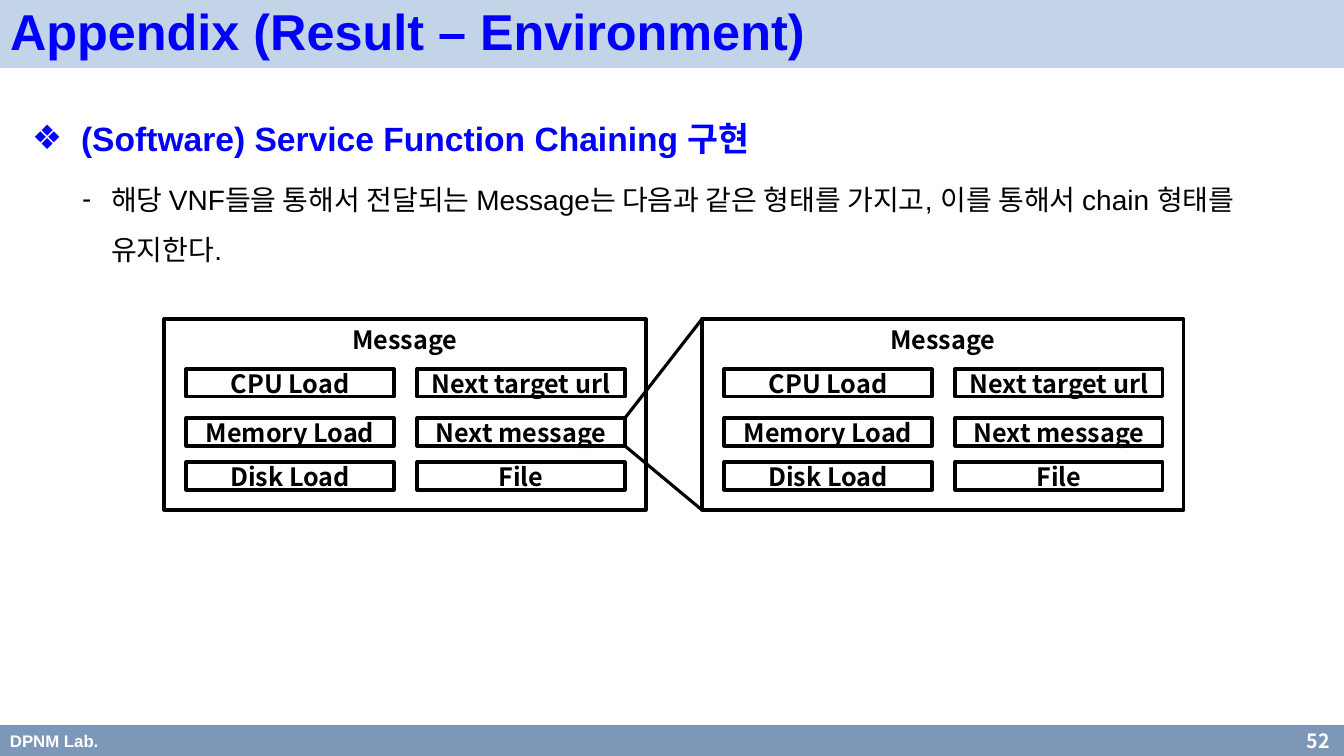
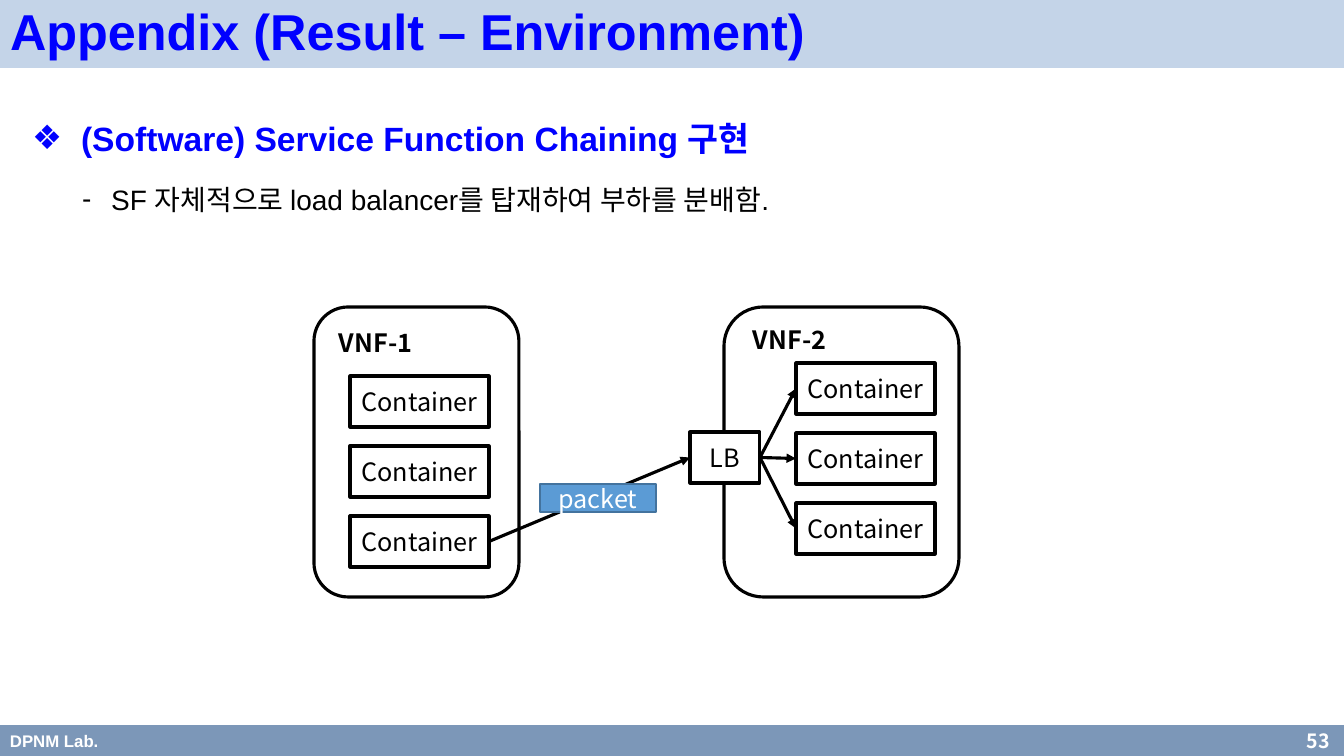
from lxml import etree
from pptx import Presentation
from pptx.dml.color import RGBColor
from pptx.enum.shapes import MSO_CONNECTOR, MSO_SHAPE
from pptx.enum.text import MSO_ANCHOR, MSO_AUTO_SIZE, PP_ALIGN
from pptx.oxml.ns import qn
from pptx.util import Emu, Pt

RECT, ROUNDED = MSO_SHAPE.RECTANGLE, MSO_SHAPE.ROUNDED_RECTANGLE
STRAIGHT = MSO_CONNECTOR.STRAIGHT
LEFT, CENTER, RIGHT = PP_ALIGN.LEFT, PP_ALIGN.CENTER, PP_ALIGN.RIGHT
TOP, MIDDLE = MSO_ANCHOR.TOP, MSO_ANCHOR.MIDDLE
NO_AUTOFIT = MSO_AUTO_SIZE.NONE

EMU_PER_PX = 914400 / 100.8
SLIDE_W, SLIDE_H = 1344, 756
TITLE_H, FOOTER_Y, FOOTER_H = 68, 725, 31

LATIN, KOREAN = "Arial", "Noto Sans CJK KR"
BLACK, WHITE, BLUE = "000000", "FFFFFF", "0000FF"
TITLE_BAND, FOOTER_BAND = "95B3D7", "376092"
PACKET_FILL, PACKET_LINE = "5B9BD5", "43739E"

TITLE = "Appendix (Result – Environment)"
HEADING = "(Software) Service Function Chaining 구현"


def px(length):
    return Emu(round(length * EMU_PER_PX))


def rgb(value):
    return RGBColor.from_string(value)


def place(shape, x, y, w, h):
    shape.left, shape.top, shape.width, shape.height = map(px, (x, y, w, h))


def fill_translucent(shape, color, percent):
    shape.fill.solid()
    shape.fill.fore_color.rgb = rgb(color)
    srgb = shape.element.spPr.find(qn("a:solidFill")).find(qn("a:srgbClr"))
    etree.SubElement(srgb, qn("a:alpha"), val=str(percent * 1000))


def write(paragraph, text, size, color=BLACK, font=KOREAN, bold=False, align=LEFT):
    paragraph.text = text
    paragraph.alignment = align
    paragraph.font.name = font
    paragraph.font.size = Pt(size)
    paragraph.font.bold = bold
    paragraph.font.color.rgb = rgb(color)


# Basic elements
def add_box(slide, x, y, w, h, text="", fill=None, line=BLACK, weight=2.25,
            color=BLACK, bold=False, anchor=MIDDLE, kind=RECT):
    box = slide.shapes.add_shape(kind, *map(px, (x, y, w, h)))
    box.shadow.inherit = False
    if fill:
        box.fill.solid()
        box.fill.fore_color.rgb = rgb(fill)
    else:
        box.fill.background()
    box.line.color.rgb = rgb(line)
    box.line.width = Pt(weight)
    if text:
        box.text_frame.word_wrap = True
        box.text_frame.vertical_anchor = anchor
        write(box.text_frame.paragraphs[0], text, 18, color, bold=bold, align=CENTER)
    return box


def add_label(slide, x, y, w, h, text, size, anchor=TOP, **style):
    label = slide.shapes.add_textbox(*map(px, (x, y, w, h)))
    label.text_frame.word_wrap = False
    label.text_frame.vertical_anchor = anchor
    write(label.text_frame.paragraphs[0], text, size, bold=True, **style)


def add_line(slide, start=(0, 0), end=(0, 0)):
    line = slide.shapes.add_connector(STRAIGHT, *map(px, (*start, *end)))
    line.line.color.rgb = rgb(BLACK)
    line.line.width = Pt(2.25)
    etree.SubElement(line.element.spPr, qn("a:effectLst"))
    return line


def add_arrow(slide, source, target):
    """Arrow from the right side of source to the left side of target."""
    arrow = add_line(slide)
    arrow.begin_connect(source, 3)
    arrow.end_connect(target, 1)
    outline = arrow.element.spPr.find(qn("a:ln"))
    etree.SubElement(outline, qn("a:tailEnd"), type="triangle")


# Shared bands, kept on the layout
def add_band(layout, slide, y, h, color, percent, text=""):
    band = slide.shapes.add_shape(RECT, *map(px, (0, y, SLIDE_W, h)))
    band.shadow.inherit = False
    band.line.fill.background()
    fill_translucent(band, color, percent)
    if text:
        band.text_frame.vertical_anchor = MIDDLE
        write(band.text_frame.paragraphs[0], text, 12, WHITE, LATIN, True)
    layout.shapes.element.insert(2, band.element)


def clear_layout_footers(layout):
    for placeholder in list(layout.placeholders):
        if placeholder.placeholder_format.idx >= 10:
            layout.shapes.element.remove(placeholder.element)


# Title, list and page number
def add_bullet(paragraph, char, margin, hanging):
    properties = paragraph._p.get_or_add_pPr()
    properties.set("marL", str(px(margin)))
    properties.set("indent", str(px(-hanging)))
    etree.SubElement(properties, qn("a:buFont"), typeface=LATIN)
    etree.SubElement(properties, qn("a:buChar"), char=char)


def fill_page(slide, detail, number):
    title = slide.shapes.title
    place(title, 0, 0, SLIDE_W, TITLE_H)
    fill_translucent(title, TITLE_BAND, 33)
    title.text_frame.auto_size = NO_AUTOFIT
    title.text_frame.vertical_anchor = MIDDLE
    title.text_frame.paragraphs[0].line_spacing = 0.9
    write(title.text_frame.paragraphs[0], TITLE, 36, BLUE, LATIN, True)

    body = slide.placeholders[1]
    place(body, 22, 93, 1304, 618)
    body.text_frame.auto_size = NO_AUTOFIT
    heading = body.text_frame.paragraphs[0]
    point = body.text_frame.add_paragraph()
    point.level = 1
    for paragraph, before in ((heading, 0), (point, 5)):
        paragraph.line_spacing = 1.5
        paragraph.space_before = Pt(before)
    add_bullet(heading, "❖", 49, 49)
    add_bullet(point, "-", 79, 29)
    write(heading, HEADING, 24, BLUE, LATIN, True)
    write(point, detail, 20, BLACK, LATIN)

    add_label(slide, 1244, FOOTER_Y, 96, FOOTER_H, str(number), 14,
              anchor=MIDDLE, color=WHITE, align=RIGHT)


# Message diagram
def add_message(slide, x, y):
    add_box(slide, x, y, 482, 191, "Message", WHITE, bold=True, anchor=TOP)
    rows = ((50, "CPU Load", "Next target url"),
            (99, "Memory Load", "Next message"),
            (143, "Disk Load", "File"))
    for dy, *fields in rows:
        for column, field in enumerate(fields):
            add_box(slide, x + 22 + 231 * column, y + dy, 208, 28, field, WHITE, bold=True)


def draw_messages(slide):
    for x in (164, 702):
        add_message(slide, x, 319)
    add_line(slide, (625, 418), (702, 319))
    add_line(slide, (625, 446), (702, 510))


# Load balancing diagram
def add_vnf(slide, name, x, w, label_at, first_container):
    add_box(slide, x, 307, w, 290, kind=ROUNDED)
    add_label(slide, *label_at, 97, 40, name, 18)
    left, top = first_container
    return [add_box(slide, left, top + 70 * row, 139, 51, "Container") for row in range(3)]


def draw_load_balancing(slide):
    senders = add_vnf(slide, "VNF-1", 314, 205, (329, 322), (350, 376))
    receivers = add_vnf(slide, "VNF-2", 724, 235, (743, 319), (796, 363))
    balancer = add_box(slide, 690, 432, 70, 51, "LB", WHITE)
    add_arrow(slide, senders[-1], balancer)
    add_box(slide, 540, 484, 116, 28, "packet", PACKET_FILL, PACKET_LINE, 1, WHITE)
    for receiver in receivers:
        add_arrow(slide, balancer, receiver)


def main():
    prs = Presentation()
    prs.slide_width, prs.slide_height = px(SLIDE_W), px(SLIDE_H)
    layout = prs.slide_layouts[1]
    clear_layout_footers(layout)
    pages = (
        ("해당 VNF들을 통해서 전달되는 Message는 다음과 같은 형태를 가지고, "
         "이를 통해서 chain 형태를 유지한다.", draw_messages),
        ("SF 자체적으로 load balancer를 탑재하여 부하를 분배함.", draw_load_balancing),
    )
    slides = [prs.slides.add_slide(layout) for _ in pages]
    add_band(layout, slides[0], 0, TITLE_H, TITLE_BAND, 33)
    add_band(layout, slides[0], FOOTER_Y, FOOTER_H, FOOTER_BAND, 65, "DPNM Lab.")
    for number, (slide, (detail, draw)) in enumerate(zip(slides, pages), start=52):
        fill_page(slide, detail, number)
        draw(slide)
    prs.save("out.pptx")


if __name__ == "__main__":
    main()
